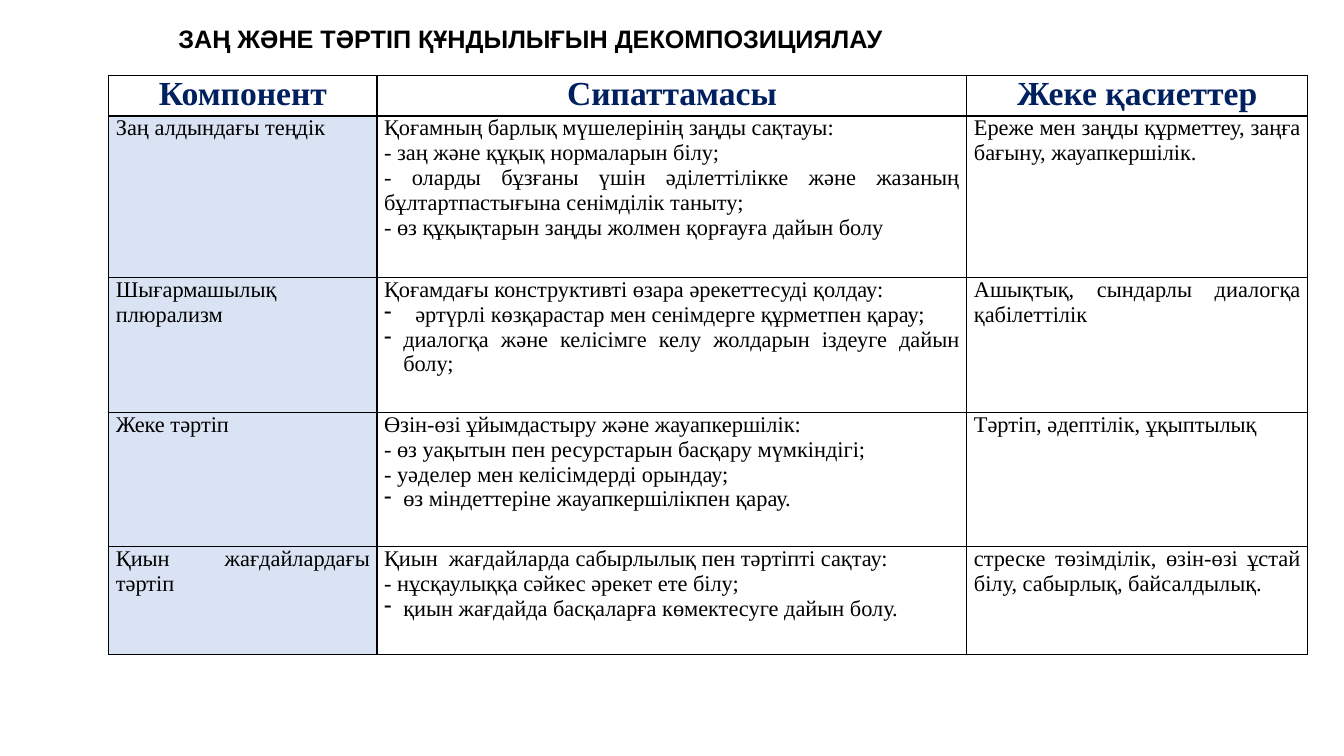
from dataclasses import dataclass

from lxml.etree import SubElement
from pptx import Presentation
from pptx.dml.color import RGBColor
from pptx.enum.text import PP_ALIGN
from pptx.oxml.ns import qn
from pptx.util import Inches, Pt


@dataclass(frozen=True)
class Theme:
    ink: RGBColor = RGBColor(0, 0, 0)
    navy: RGBColor = RGBColor(0x00, 0x20, 0x60)
    tint: RGBColor = RGBColor(0xDA, 0xE3, 0xF3)
    line: str = "000000"
    sans: str = "Arial"
    serif: str = "Times New Roman"
    title: int = 18
    head: int = 24
    body: int = 16


@dataclass(frozen=True)
class Para:
    text: str
    hang: float = 0  # hanging indent of a dash bullet, inches


@dataclass(frozen=True)
class Row:
    height: float
    name: list[Para]
    about: list[Para]
    traits: list[Para]


THEME = Theme()
TITLE = "ЗАҢ ЖӘНЕ ТӘРТІП ҚҰНДЫЛЫҒЫН ДЕКОМПОЗИЦИЯЛАУ"
HEADS = ["Компонент", "Сипаттамасы", "Жеке қасиеттер"]
WIDTHS = [2.66, 5.85, 3.38]
HEAD_H = 0.4
ROWS = [
    Row(1.6, [Para("Заң алдындағы теңдік")], [
        Para("Қоғамның барлық мүшелерінің заңды сақтауы:"),
        Para("- заң және құқық нормаларын білу;"),
        Para("- оларды бұзғаны үшін әділеттілікке және жазаның "
             "бұлтартпастығына сенімділік таныту;"),
        Para("- өз құқықтарын заңды жолмен қорғауға дайын болу"),
    ], [Para("Ереже мен заңды құрметтеу, заңға бағыну, жауапкершілік.")]),
    Row(1.34, [Para("Шығармашылық"), Para("плюрализм")], [
        Para("Қоғамдағы конструктивті өзара әрекеттесуді қолдау:"),
        Para("әртүрлі көзқарастар мен сенімдерге құрметпен қарау;", 0.31),
        Para("диалогқа және келісімге келу жолдарын іздеуге дайын болу;", 0.19),
    ], [Para("Ашықтық, сындарлы диалогқа қабілеттілік")]),
    Row(1.33, [Para("Жеке тәртіп")], [
        Para("Өзін-өзі ұйымдастыру және жауапкершілік:"),
        Para("- өз уақытын пен ресурстарын басқару мүмкіндігі;"),
        Para("- уәделер мен келісімдерді орындау;"),
        Para("өз міндеттеріне жауапкершілікпен қарау.", 0.19),
    ], [Para("Тәртіп, әдептілік, ұқыптылық")]),
    Row(1.07, [Para("Қиын жағдайлардағы тәртіп")], [
        Para("Қиын  жағдайларда сабырлылық пен тәртіпті сақтау:"),
        Para("- нұсқаулыққа сәйкес әрекет ете білу;"),
        Para("қиын жағдайда басқаларға көмектесуге дайын болу.", 0.19),
    ], [Para("стреске төзімділік, өзін-өзі ұстай білу, сабырлық, байсалдылық.")]),
]


def style(para, face: str, size: int, color: RGBColor, bold: bool) -> None:
    for run in para.runs:
        run.font.name, run.font.size = face, Pt(size)
        run.font.color.rgb, run.font.bold = color, bold


def bullet(para, hang: float) -> None:
    props = para._p.get_or_add_pPr()
    props.set("marL", str(Inches(hang)))
    props.set("indent", str(-Inches(hang)))
    SubElement(props, qn("a:buChar"), char="-")


def frame(cell, tint: bool) -> None:
    """Set margins, borders and fill of a cell."""
    cell.margin_left = cell.margin_right = Inches(0.07)
    cell.margin_top = cell.margin_bottom = 0
    props = cell._tc.get_or_add_tcPr()
    for side in ("lnL", "lnR", "lnT", "lnB"):
        edge = SubElement(props, qn(f"a:{side}"), w=str(Pt(1)))
        fill = SubElement(edge, qn("a:solidFill"))
        SubElement(fill, qn("a:srgbClr"), val=THEME.line)
    if tint:
        cell.fill.solid()
        cell.fill.fore_color.rgb = THEME.tint
    else:
        cell.fill.background()


def write(cell, paras: list[Para], head: bool = False) -> None:
    cell.text_frame.text = "\n".join(para.text for para in paras)
    for para, item in zip(cell.text_frame.paragraphs, paras):
        para.alignment = PP_ALIGN.CENTER if head else PP_ALIGN.JUSTIFY
        if item.hang:
            bullet(para, item.hang)
        size, color = (THEME.head, THEME.navy) if head else (THEME.body, THEME.ink)
        style(para, THEME.serif, size, color, head)


def add_title(slide) -> None:
    box = slide.shapes.add_textbox(Inches(1.67), Inches(0.18), Inches(9.48), Inches(0.4))
    box.text_frame.word_wrap = True
    box.text_frame.text = TITLE
    style(box.text_frame.paragraphs[0], THEME.sans, THEME.title, THEME.ink, True)


def add_grid(slide) -> None:
    heights = [HEAD_H] + [row.height for row in ROWS]
    table = slide.shapes.add_table(
        len(heights), len(WIDTHS), Inches(1.08), Inches(0.75),
        Inches(sum(WIDTHS)), Inches(sum(heights))).table
    table.first_row = table.horz_banding = False
    for col, width in zip(table.columns, WIDTHS):
        col.width = Inches(width)
    for line, height in zip(table.rows, heights):
        line.height = Inches(height)

    # Header row, then one row per component
    lines = [[[Para(head)] for head in HEADS]]
    lines += [[row.name, row.about, row.traits] for row in ROWS]
    for r, line in enumerate(lines):
        for c, paras in enumerate(line):
            cell = table.cell(r, c)
            frame(cell, tint=r > 0 and c == 0)
            write(cell, paras, head=r == 0)


def main() -> None:
    deck = Presentation()
    deck.slide_width, deck.slide_height = Inches(13.33), Inches(7.5)
    slide = deck.slides.add_slide(deck.slide_layouts[6])
    add_title(slide)
    add_grid(slide)
    deck.save("out.pptx")


if __name__ == "__main__":
    main()
